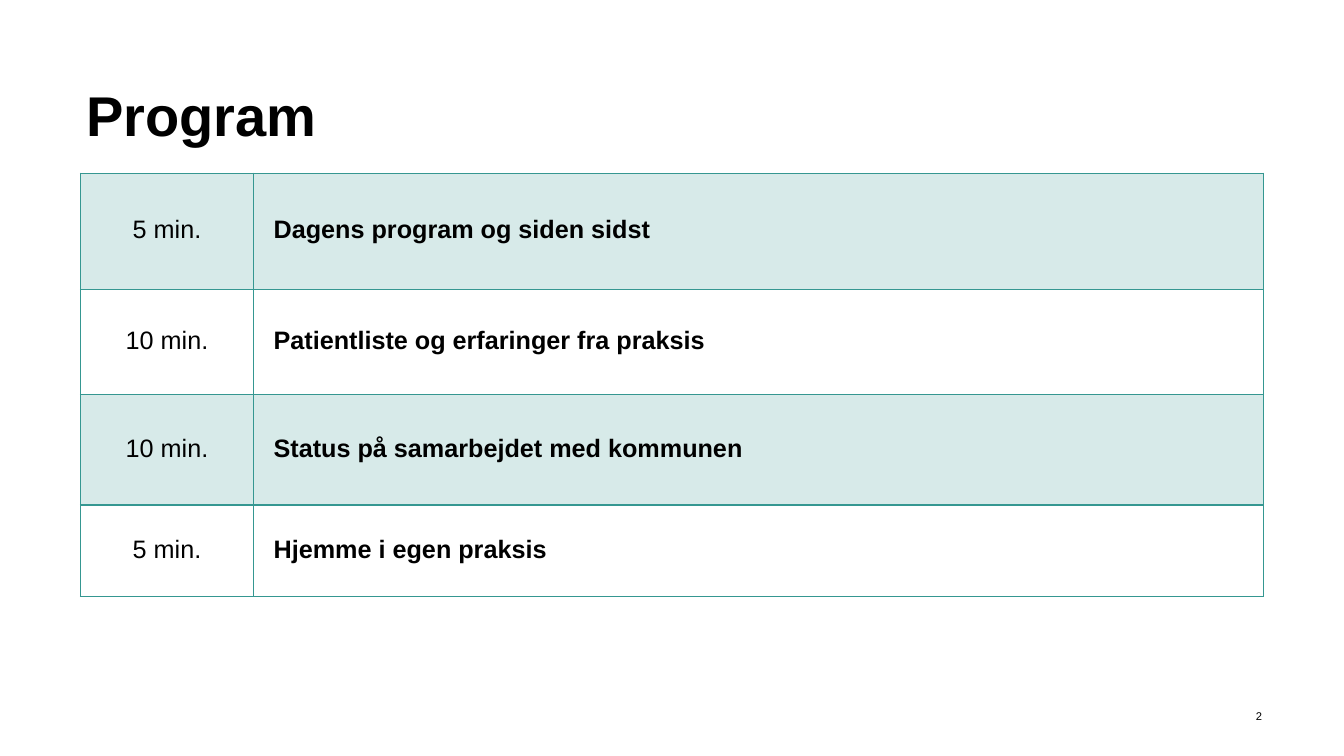
"""Build the programme slide with its timed agenda table."""
from dataclasses import dataclass

from lxml import etree
from pptx import Presentation
from pptx.dml.color import RGBColor
from pptx.enum import text as t
from pptx.oxml import ns
from pptx.util import Pt

BLACK = RGBColor(0x00, 0x00, 0x00)
TEAL = RGBColor(0x35, 0x97, 0x91)
PALE_TEAL = RGBColor(0xD7, 0xEA, 0xE9)
WHITE = RGBColor(0xFF, 0xFF, 0xFF)
FONT = "Arial"
COLUMN_WIDTHS = (123.6, 721.6)


@dataclass(frozen=True)
class Label:
    text: str
    left: float
    top: float
    width: float
    height: float
    size: float
    bold: bool
    align: t.PP_ALIGN
    spacing: float
    insets: tuple[float, float, float, float]


@dataclass(frozen=True)
class AgendaItem:
    duration: str
    topic: str
    height: float


LABELS = (
    Label("Program", 56.9, 60.5, 846, 46, 40, True, t.PP_ALIGN.LEFT, 0.8, (5, 0, 5, 1.5)),
    Label("2", 845.3, 504.7, 58.3, 13.7, 8, False, t.PP_ALIGN.RIGHT, 1, (2, 2, 2, 2)),
)
AGENDA = (
    AgendaItem("5 min.", "Dagens program og siden sidst", 82.8),
    AgendaItem("10 min.", "Patientliste og erfaringer fra praksis", 75),
    AgendaItem("10 min.", "Status på samarbejdet med kommunen", 79.2),
    AgendaItem("5 min.", "Hjemme i egen praksis", 65.4),
)


def write(frame, content: str, size: float, bold: bool, align: t.PP_ALIGN, spacing: float) -> None:
    frame.text = content
    frame.word_wrap = True
    paragraph = frame.paragraphs[0]
    paragraph.alignment = align
    paragraph.line_spacing = spacing
    font = paragraph.runs[0].font
    font.name, font.size, font.bold = FONT, Pt(size), bold
    font.color.rgb = BLACK


def add_label(slide, label: Label) -> None:
    box = slide.shapes.add_textbox(
        Pt(label.left), Pt(label.top), Pt(label.width), Pt(label.height))
    frame = box.text_frame
    write(frame, label.text, label.size, label.bold, label.align, label.spacing)
    frame.vertical_anchor = t.MSO_ANCHOR.BOTTOM
    frame.margin_left, frame.margin_top, frame.margin_right, frame.margin_bottom = map(
        Pt, label.insets)


def add_borders(cell) -> None:
    properties = cell._tc.get_or_add_tcPr()
    for position, side in enumerate(("lnL", "lnR", "lnT", "lnB")):
        line = etree.Element(ns.qn(f"a:{side}"), w=str(Pt(1)))
        fill = etree.SubElement(line, ns.qn("a:solidFill"))
        etree.SubElement(fill, ns.qn("a:srgbClr"), val=str(TEAL))
        properties.insert(position, line)


def add_cell(cell, content: str, bold: bool, align: t.PP_ALIGN, fill: RGBColor) -> None:
    write(cell.text_frame, content, 18, bold, align, 0.9)
    cell.vertical_anchor = t.MSO_ANCHOR.MIDDLE
    cell.margin_left = cell.margin_right = Pt(14.4)
    cell.margin_top = cell.margin_bottom = Pt(7.2)
    cell.fill.solid()
    cell.fill.fore_color.rgb = fill
    add_borders(cell)


def add_agenda(slide) -> None:
    agenda = slide.shapes.add_table(
        len(AGENDA), len(COLUMN_WIDTHS), Pt(57.5), Pt(123.8),
        Pt(sum(COLUMN_WIDTHS)), Pt(sum(item.height for item in AGENDA))).table
    agenda.first_row = agenda.horz_banding = False
    for column, width in zip(agenda.columns, COLUMN_WIDTHS):
        column.width = Pt(width)
    for index, item in enumerate(AGENDA):
        agenda.rows[index].height = Pt(item.height)
        fill = WHITE if index % 2 else PALE_TEAL
        add_cell(agenda.cell(index, 0), item.duration, False, t.PP_ALIGN.CENTER, fill)
        add_cell(agenda.cell(index, 1), item.topic, True, t.PP_ALIGN.LEFT, fill)


def main() -> None:
    deck = Presentation()
    deck.slide_width, deck.slide_height = Pt(960), Pt(540)
    slide = deck.slides.add_slide(deck.slide_layouts[6])
    for label in LABELS:
        add_label(slide, label)
    add_agenda(slide)
    deck.save("out.pptx")


if __name__ == "__main__":
    main()
